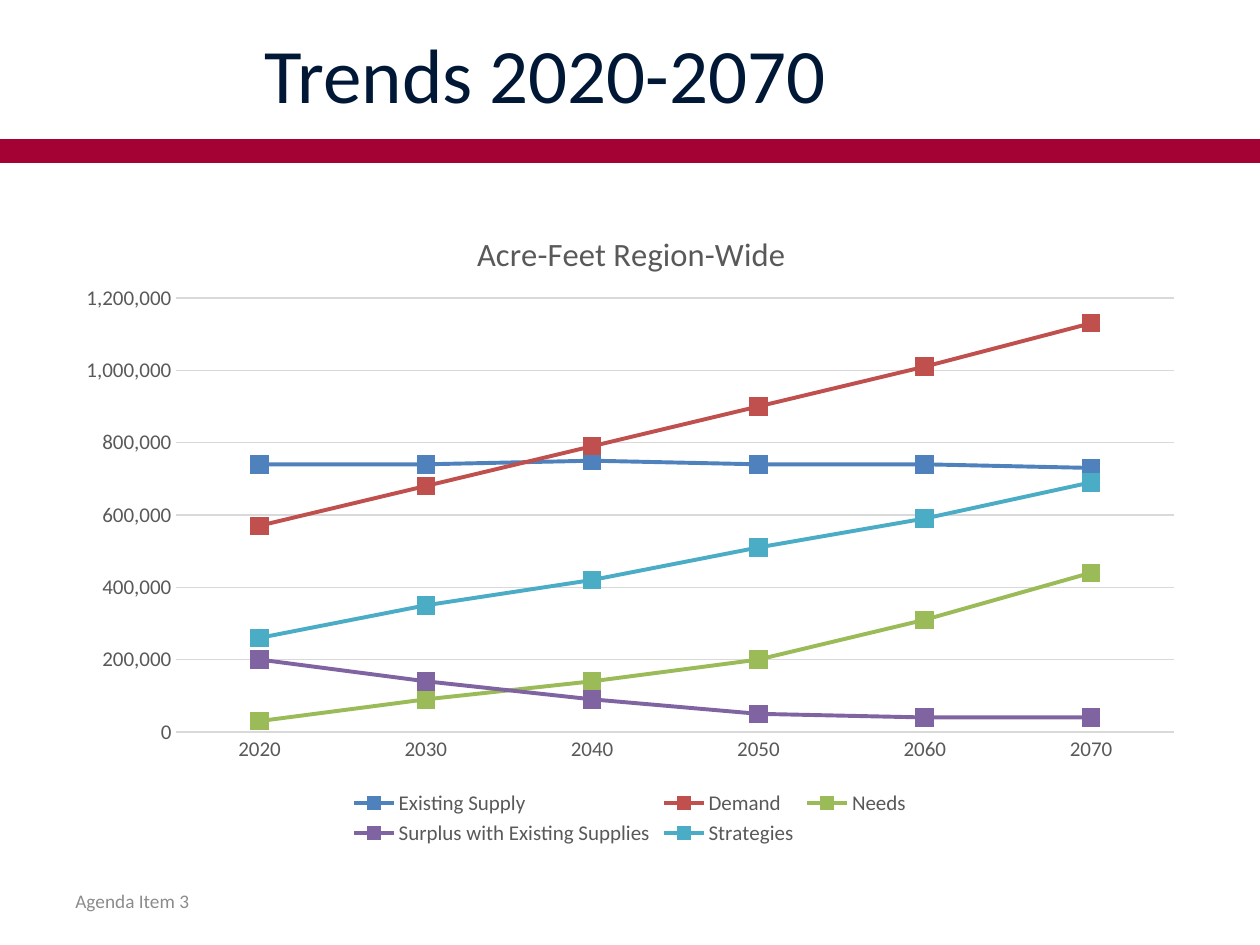
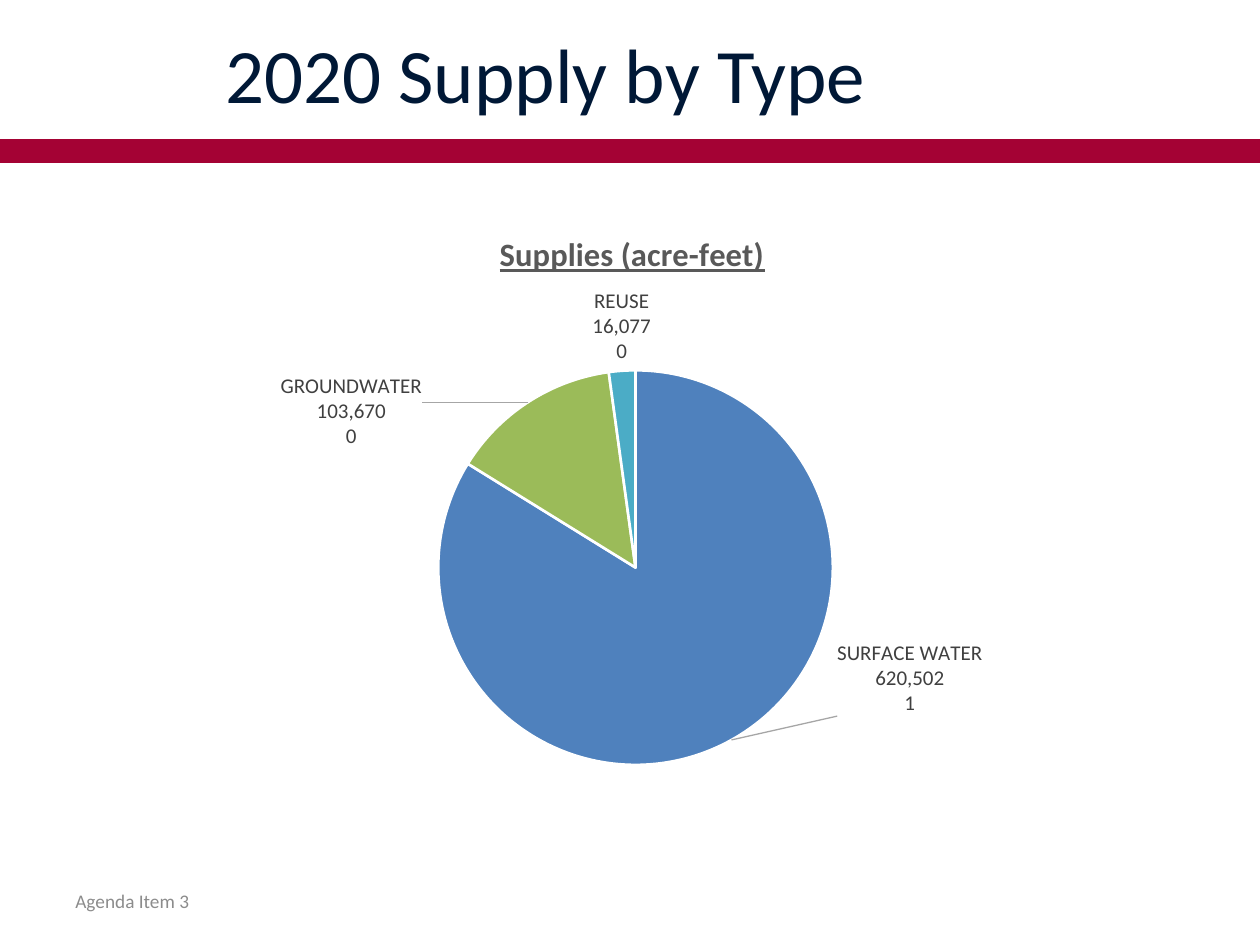
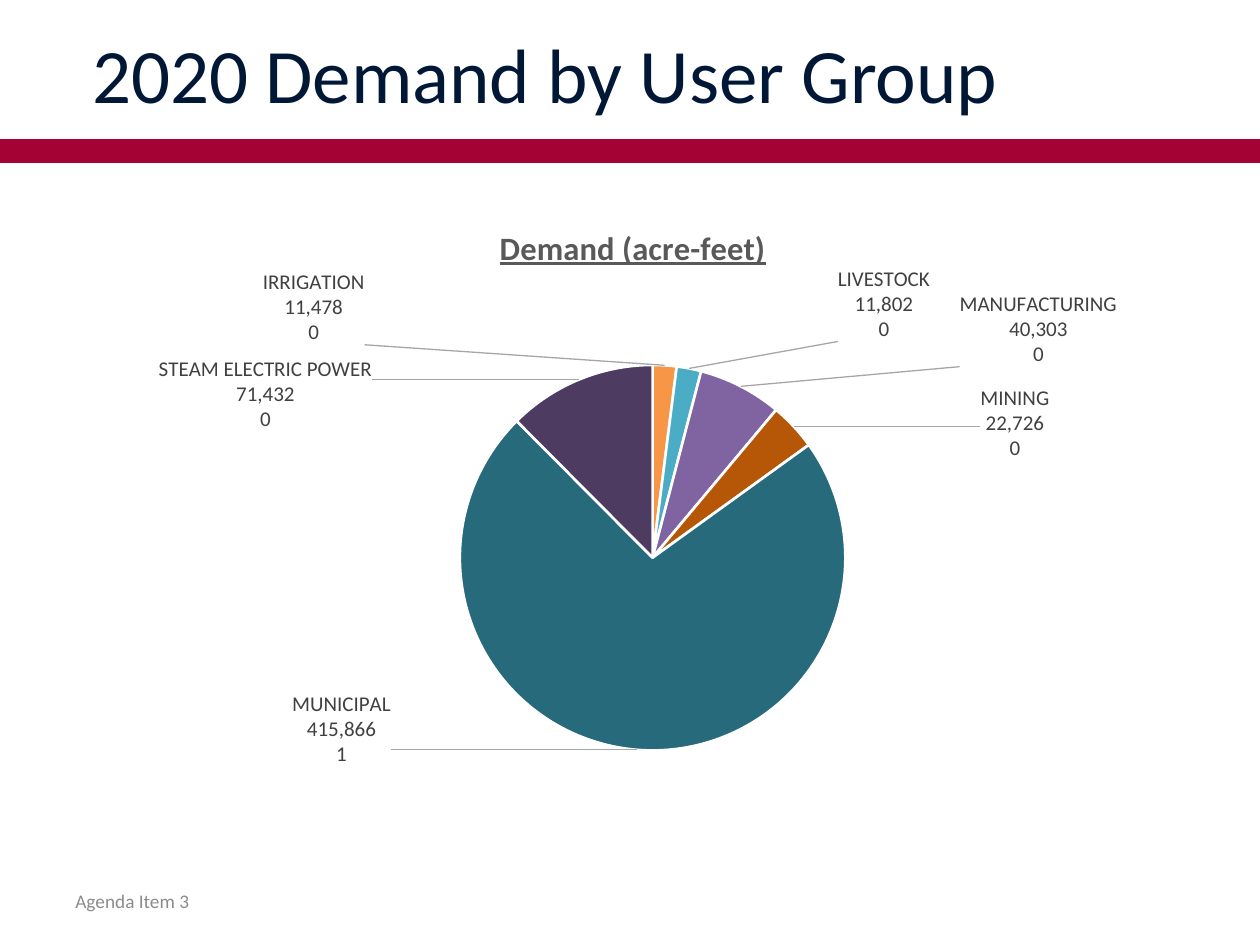
import copy

import lxml.etree
import pptx
import pptx.chart.data
import pptx.dml.color
import pptx.enum.chart
import pptx.enum.shapes
import pptx.enum.text
import pptx.oxml
import pptx.oxml.ns
import pptx.util

Inches = pptx.util.Inches
Pt = pptx.util.Pt
qn = pptx.oxml.ns.qn

NAVY = "001836"
CRIMSON = "A40234"
FOOTER_GRAY = "8C8C8C"
AXIS_GRAY = "595959"
LABEL_GRAY = "404040"
GRID_GRAY = "D9D9D9"
LEADER_GRAY = "A6A6A6"
WHITE = "FFFFFF"

TITLE_TEXT = {"name": "Calibri", "size": Pt(44)}
FOOTER_TEXT = {"name": "Calibri", "size": Pt(11)}
CHART_TEXT = {"name": "Calibri", "size": Pt(12)}
TREND_HEADING = {"name": "Calibri", "size": Pt(18.6), "bold": False}
PIE_HEADING = {"name": "Calibri", "size": Pt(18.6), "bold": True, "underline": True}
LABEL_PARTS = {
    "show_value": True,
    "show_category_name": True,
    "show_percentage": True,
    "number_format": "#,##0",
    "number_format_is_linked": False,
    "position": pptx.enum.chart.XL_LABEL_POSITION.OUTSIDE_END,
}

YEARS = ["2020", "2030", "2040", "2050", "2060", "2070"]
TRENDS = [
    ("Existing Supply", "4F81BD", [740000, 740000, 750000, 740000, 740000, 730000]),
    ("Demand", "C0504D", [570000, 680000, 790000, 900000, 1010000, 1130000]),
    ("Needs", "9BBB59", [30000, 90000, 140000, 200000, 310000, 440000]),
    ("Surplus with Existing Supplies", "8064A2", [200000, 140000, 90000, 50000, 40000, 40000]),
    ("Strategies", "4BACC6", [260000, 350000, 420000, 510000, 590000, 690000]),
]
SUPPLIES = [
    ("SURFACE WATER", 620502, "4F81BD", (0.09, -0.16)),
    ("GROUNDWATER", 103670, "9BBB59", (-0.09, 0.08)),
    ("REUSE", 16077, "4BACC6", None),
]
DEMANDS = [
    ("IRRIGATION", 11478, "F79646", (-0.31, -0.02)),
    ("LIVESTOCK", 11802, "4BACC6", (0.13, -0.03)),
    ("MANUFACTURING", 40303, "8064A2", (0.19, -0.02)),
    ("MINING", 22726, "B65708", (0.16, 0.06)),
    ("MUNICIPAL", 415866, "276A7C", (-0.26, -0.1)),
    ("STEAM ELECTRIC POWER", 71432, "4D3B62", (-0.18, 0.09)),
]


def rgb(color):
    return pptx.dml.color.RGBColor.from_string(color)


def apply_format(target, values):
    for attribute, value in values.items():
        setattr(target, attribute, value)


def format_text(font, values, color):
    apply_format(font, values)
    font.color.rgb = rgb(color)


def format_line(line, color, width):
    line.color.rgb = rgb(color)
    line.width = Pt(width)


def make_layout(values, inner=False):
    layout = lxml.etree.Element(qn("c:layout"))
    manual = lxml.etree.SubElement(layout, qn("c:manualLayout"))
    settings = [("layoutTarget", "inner")] if inner else []
    if inner or values["edge"]:
        settings += [("xMode", "edge"), ("yMode", "edge")]
    settings += [(key, values[key]) for key in "xywh" if key in values]
    for tag, value in settings:
        lxml.etree.SubElement(manual, qn("c:" + tag)).set("val", str(value))
    return pptx.oxml.parse_xml(lxml.etree.tostring(layout))


def add_band(slide):
    band = slide.shapes.add_connector(
        pptx.enum.shapes.MSO_CONNECTOR.STRAIGHT,
        Inches(0), Inches(1.2), Inches(10), Inches(1.2))
    format_line(band.line, CRIMSON, 14)
    lxml.etree.SubElement(band._element.spPr, qn("a:effectLst"))


def add_footer(slide):
    footer = slide.shapes.add_textbox(Inches(0.5), Inches(6.95), Inches(2.33), Inches(0.4))
    frame = footer.text_frame
    frame.word_wrap = True
    frame.vertical_anchor = pptx.enum.text.MSO_ANCHOR.MIDDLE
    frame.text = "Agenda Item 3"
    format_text(frame.paragraphs[0].font, FOOTER_TEXT, FOOTER_GRAY)


def add_topic_slide(deck, heading):
    slide = deck.slides.add_slide(deck.slide_layouts.get_by_name("Title Only"))
    add_band(slide)
    title = slide.shapes.title
    apply_format(title, {"left": Inches(0.08), "top": Inches(0.08),
                         "width": Inches(8.5), "height": Inches(1)})
    title.text_frame.text = heading
    title.text_frame.vertical_anchor = pptx.enum.text.MSO_ANCHOR.MIDDLE
    paragraph = title.text_frame.paragraphs[0]
    paragraph.alignment = pptx.enum.text.PP_ALIGN.CENTER
    format_text(paragraph.font, TITLE_TEXT, NAVY)
    add_footer(slide)
    return slide


def add_water_chart(slide, kind, data, heading, heading_format, heading_at, plot_area):
    chart = slide.shapes.add_chart(
        kind, Inches(0.5), Inches(1.53), Inches(9), Inches(5.22), data).chart
    format_text(chart.font, CHART_TEXT, AXIS_GRAY)
    chart.has_title = True
    frame = chart.chart_title.text_frame
    frame.text = heading
    format_text(frame.paragraphs[0].runs[0].font, heading_format, AXIS_GRAY)
    title = chart.chart_title._element
    for old in title.findall(qn("c:layout")):
        title.remove(old)
    x, y = heading_at
    title.find(qn("c:tx")).addnext(make_layout({"x": x, "y": y, "edge": True}))
    plots = chart._chartSpace.chart.plotArea
    for old in plots.findall(qn("c:layout")):
        plots.remove(old)
    plots.insert(0, make_layout(dict(zip("xywh", plot_area)), inner=True))
    return chart


def format_axes(chart):
    for axis in (chart.category_axis, chart.value_axis):
        axis.major_tick_mark = pptx.enum.chart.XL_TICK_MARK.NONE
        axis.minor_tick_mark = pptx.enum.chart.XL_TICK_MARK.NONE
        format_text(axis.tick_labels.font, CHART_TEXT, AXIS_GRAY)
    format_line(chart.category_axis.format.line, GRID_GRAY, 0.75)
    amounts = chart.value_axis
    apply_format(amounts, {"minimum_scale": 0, "maximum_scale": 1200000,
                           "major_unit": 200000, "has_major_gridlines": True})
    amounts.format.line.fill.background()
    format_line(amounts.major_gridlines.format.line, GRID_GRAY, 0.75)
    apply_format(amounts.tick_labels, {"number_format": "#,##0",
                                       "number_format_is_linked": False})


def add_trend_chart(slide):
    data = pptx.chart.data.CategoryChartData(number_format="#,##0")
    data.categories = YEARS
    for name, _, amounts in TRENDS:
        data.add_series(name, amounts)
    chart = add_water_chart(
        slide, pptx.enum.chart.XL_CHART_TYPE.LINE_MARKERS, data, "Acre-Feet Region-Wide",
        TREND_HEADING, (0.36, 0.05), (0.1, 0.16, 0.88, 0.66))
    format_axes(chart)
    chart.has_legend = True
    apply_format(chart.legend, {"position": pptx.enum.chart.XL_LEGEND_POSITION.BOTTOM,
                                "include_in_layout": False})
    format_text(chart.legend.font, CHART_TEXT, AXIS_GRAY)
    chart.plots[0].vary_by_categories = False
    for trend, (_, color, _) in zip(chart.plots[0].series, TRENDS):
        trend.smooth = False
        format_line(trend.format.line, color, 2.25)
        apply_format(trend.marker, {"style": pptx.enum.chart.XL_MARKER_STYLE.SQUARE,
                                    "size": 10})
        trend.marker.format.fill.solid()
        trend.marker.format.fill.fore_color.rgb = rgb(color)
        format_line(trend.marker.format.line, color, 0.75)


def add_leader_lines(labels):
    leaders = lxml.etree.SubElement(labels, qn("c:leaderLines"))
    properties = lxml.etree.SubElement(leaders, qn("c:spPr"))
    line = lxml.etree.SubElement(properties, qn("a:ln"), w=str(Pt(0.75)))
    fill = lxml.etree.SubElement(line, qn("a:solidFill"))
    lxml.etree.SubElement(fill, qn("a:srgbClr"), val=LEADER_GRAY)


def label_slices(series, slices):
    apply_format(series.data_labels, LABEL_PARTS)
    format_text(series.data_labels.font, CHART_TEXT, LABEL_GRAY)
    labels = series.data_labels._element
    separator = lxml.etree.Element(qn("c:separator"))
    separator.text = "\n"
    labels.find(qn("c:showBubbleSize")).addnext(separator)
    shared = [part for part in labels if part.tag != qn("c:showLeaderLines")]
    moved = [(index, entry[3]) for index, entry in enumerate(slices) if entry[3]]
    for place, (index, (x, y)) in enumerate(moved):
        label = lxml.etree.Element(qn("c:dLbl"))
        lxml.etree.SubElement(label, qn("c:idx"), val=str(index))
        label.append(make_layout({"x": x, "y": y, "edge": False}))
        label.extend(copy.deepcopy(part) for part in shared)
        labels.insert(place, label)
    add_leader_lines(labels)


def add_share_chart(slide, heading, slices, heading_at, plot_area):
    data = pptx.chart.data.CategoryChartData(number_format="#,##0")
    data.categories = [entry[0] for entry in slices]
    data.add_series(heading, [entry[1] for entry in slices])
    chart = add_water_chart(slide, pptx.enum.chart.XL_CHART_TYPE.PIE, data, heading,
                            PIE_HEADING, heading_at, plot_area)
    chart.has_legend = False
    series = chart.plots[0].series[0]
    for index, (_, _, color, _) in enumerate(slices):
        wedge = series.points[index].format
        wedge.fill.solid()
        wedge.fill.fore_color.rgb = rgb(color)
        format_line(wedge.line, WHITE, 1.5)
    label_slices(series, slices)


def main():
    deck = pptx.Presentation()
    apply_format(deck, {"slide_width": Inches(10), "slide_height": Inches(7.5)})
    add_trend_chart(add_topic_slide(deck, "Trends 2020-2070"))
    add_share_chart(add_topic_slide(deck, "2020 Supply by Type"), "Supplies (acre-feet)",
                    SUPPLIES, (0.38, 0.05), (0.33, 0.27, 0.35, 0.6))
    add_share_chart(add_topic_slide(deck, "2020 Demand by User Group"), "Demand (acre-feet)",
                    DEMANDS, (0.38, 0.04), (0.35, 0.26, 0.34, 0.59))
    deck.save("out.pptx")


if __name__ == "__main__":
    main()
